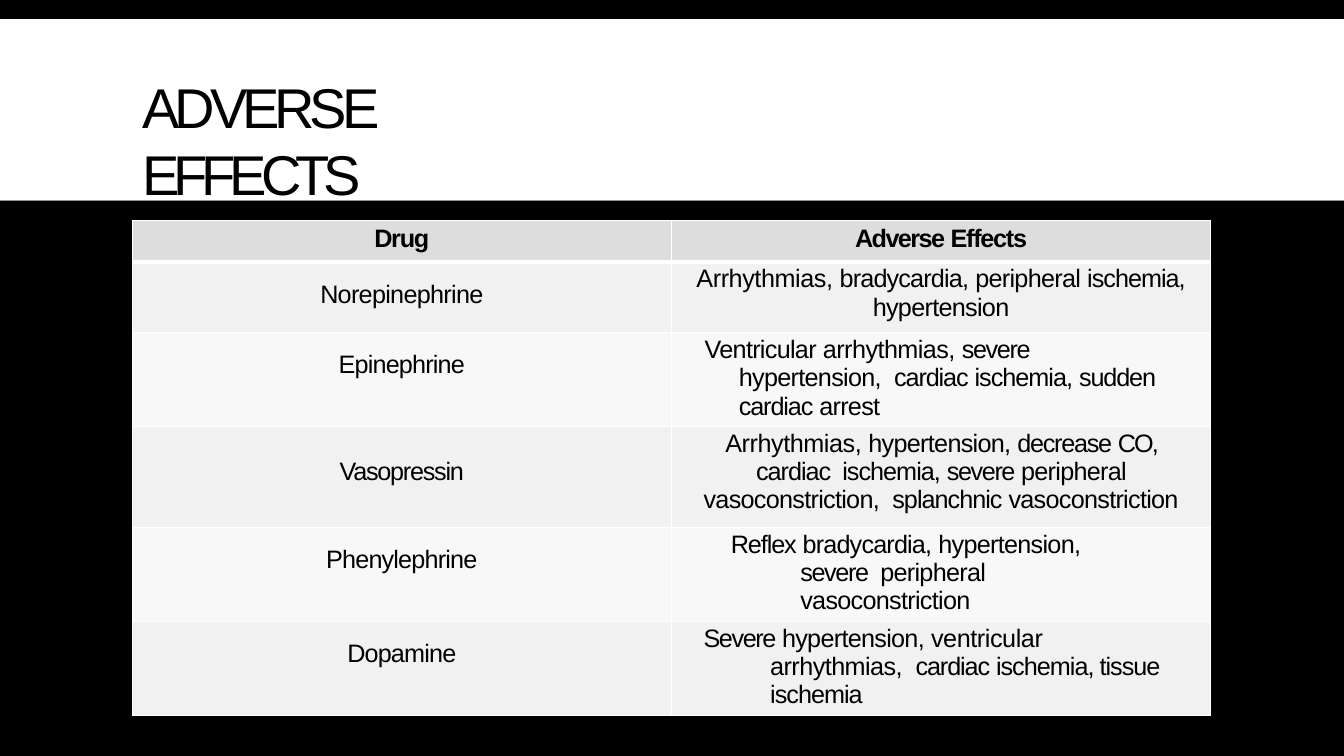
"""Build the adverse effects slide with its drug table."""
from dataclasses import dataclass

from lxml.etree import SubElement
from pptx import Presentation
from pptx.dml.color import RGBColor
from pptx.enum.shapes import MSO_SHAPE as Preset
from pptx.enum.text import MSO_ANCHOR as Anchor, MSO_AUTO_SIZE as AutoSize, PP_ALIGN as Align
from pptx.oxml.ns import qn
from pptx.slide import Slide
from pptx.table import _Cell as Cell
from pptx.text.text import _Paragraph as Paragraph
from pptx.util import Cm, Pt


@dataclass(frozen=True)
class Theme:
    font: str = "Arial"
    title_size: float = 40
    table_size: float = 18
    black: str = "000000"
    white: str = "FFFFFF"
    header: str = "DDDDDD"
    odd_row: str = "F1F1F1"
    even_row: str = "F8F8F8"
    thin: float = 1
    thick: float = 3


@dataclass(frozen=True)
class Band:
    top: float
    height: float
    color: str


@dataclass(frozen=True)
class Piece:
    text: str
    spacing: float


@dataclass(frozen=True)
class Entry:
    paragraphs: list[list[Piece]]
    inset: float
    left: float = 0
    hanging: float = 0
    right: float = 0


@dataclass(frozen=True)
class Row:
    height: float
    drug: Entry
    effects: Entry


THEME = Theme()
WIDTH, HEIGHT = 33.87, 19.05
COLUMN_WIDTH = 13.59
BANDS = [
    Band(0, 0.48, THEME.black),
    Band(5.05, 14, THEME.black),
    Band(0.48, 4.57, THEME.white),
]
TITLE = [Piece("ADVERSE ", -3.6), Piece("EFFECTS", -4.3)]


def drug(name: str, spacing: float, inset: float = 0.46) -> Entry:
    """Return a one-run entry for the drug column."""
    return Entry([[Piece(name, spacing)]], inset)


ROWS = [
    Row(1.04, drug("Drug", -0.9, 0.1),
        Entry([[Piece("Adverse ", -1.1), Piece("Effects", -0.9)]], 0.1)),
    Row(1.78, drug("Norepinephrine", -0.5), Entry([
        [Piece("Arrhythmias, ", -0.3), Piece("bradycardia, ", -0.6),
         Piece("peripheral ", -0.5), Piece("ischemia,", -0.7)],
        [Piece("hypertension", -0.5)]], 0.08)),
    Row(1.78, drug("Epinephrine", -0.6), Entry([
        [Piece("Ventricular ", -0.5), Piece("arrhythmias, ", -0.4), Piece("severe ", -1),
         Piece("hypertension,  ", -0.5), Piece("cardiac ", -0.8), Piece("ischemia, ", -0.7),
         Piece("sudden cardiac ", -0.8), Piece("arrest", -0.5)]], 0.08, 1.7, -0.86, 1.07)),
    Row(2.54, drug("Vasopressin", -0.9, 0.78), Entry([
        [Piece("Arrhythmias, ", -0.3), Piece("hypertension, ", -0.5), Piece("decrease ", -0.9),
         Piece("CO, ", -1.4), Piece("cardiac  ischemia, ", -0.7), Piece("severe ", -1),
         Piece("peripheral vasoconstriction,  ", -0.5), Piece("splanchnic ", -0.7),
         Piece("vasoconstriction", -0.5)]], 0.08, 0.41, 0, 0.41)),
    Row(1.78, drug("Phenylephrine", -0.6), Entry([
        [Piece("Reflex ", -0.8), Piece("bradycardia, ", -0.6), Piece("hypertension, ", -0.5),
         Piece("severe  ", -1), Piece("peripheral vasoconstriction", -0.5)]],
        0.08, 3.25, -1.75, 2.29)),
    Row(1.78, drug("Dopamine", -0.6), Entry([
        [Piece("Severe ", -1), Piece("hypertension, ", -0.5), Piece("ventricular ", -0.3),
         Piece("arrhythmias,  ", -0.4), Piece("cardiac ", -0.8),
         Piece("ischemia, tissue ischemia", -0.7)]], 0.08, 2.49, -1.68, 0.97)),
]


def write_runs(paragraph: Paragraph, pieces: list[Piece], size: float, bold: bool) -> None:
    """Add each piece as a run with its own letter spacing."""
    for piece in pieces:
        run = paragraph.add_run()
        run.text = piece.text
        run.font.name = THEME.font
        run.font.size = Pt(size)
        run.font.bold = bold
        run.font.color.rgb = RGBColor.from_string(THEME.black)
        run._r.get_or_add_rPr().set("spc", str(round(piece.spacing * 100)))


def add_band(slide: Slide, band: Band) -> None:
    """Draw one full-width band."""
    shape = slide.shapes.add_shape(Preset.RECTANGLE, 0, Cm(band.top), Cm(WIDTH), Cm(band.height))
    shape.shadow.inherit = False
    shape.fill.solid()
    shape.fill.fore_color.rgb = RGBColor.from_string(band.color)
    shape.line.fill.background()


def format_title(slide: Slide) -> None:
    """Place the title above the bands and write its runs."""
    title = slide.shapes.title
    title.element.getparent().append(title.element)
    title.left, title.top, title.width, title.height = Cm(3.56), Cm(1.8), Cm(11.56), Cm(1.75)
    frame = title.text_frame
    frame.margin_left = frame.margin_top = Cm(0.03)
    frame.margin_right, frame.margin_bottom = Cm(0.25), 0
    frame.vertical_anchor = Anchor.TOP
    frame.word_wrap = True
    frame.auto_size = AutoSize.SHAPE_TO_FIT_TEXT
    paragraph = frame.paragraphs[0]
    paragraph.alignment = Align.LEFT
    write_runs(paragraph, TITLE, THEME.title_size, False)


def set_borders(cell: Cell, top: float, bottom: float) -> None:
    """Give a cell white borders of the given top and bottom widths."""
    properties = cell._tc.get_or_add_tcPr()
    widths = {"a:lnL": THEME.thin, "a:lnR": THEME.thin, "a:lnT": top, "a:lnB": bottom}
    for tag, width in widths.items():
        line = SubElement(properties, qn(tag), w=str(Pt(width)))
        SubElement(SubElement(line, qn("a:solidFill")), qn("a:srgbClr"), val=THEME.white)


def fill_cell(cell: Cell, entry: Entry, color: str, bold: bool) -> None:
    """Fill a cell and write its paragraphs."""
    cell.fill.solid()
    cell.fill.fore_color.rgb = RGBColor.from_string(color)
    cell.margin_left = cell.margin_right = cell.margin_bottom = 0
    cell.margin_top = Cm(entry.inset)
    cell.vertical_anchor = Anchor.TOP
    frame = cell.text_frame
    for index, pieces in enumerate(entry.paragraphs):
        paragraph = frame.add_paragraph() if index else frame.paragraphs[0]
        paragraph.alignment = Align.LEFT if entry.hanging else Align.CENTER
        properties = paragraph._p.get_or_add_pPr()
        properties.set("marL", str(Cm(entry.left)))
        properties.set("marR", str(Cm(entry.right)))
        properties.set("indent", str(Cm(entry.hanging)))
        write_runs(paragraph, pieces, THEME.table_size, bold)


def add_drug_table(slide: Slide) -> None:
    """Add the table of drugs and their adverse effects."""
    total = sum(row.height for row in ROWS)
    table = slide.shapes.add_table(
        len(ROWS), 2, Cm(3.33), Cm(5.56), Cm(2 * COLUMN_WIDTH), Cm(total)).table
    table.horz_banding = False
    for index, row in enumerate(ROWS):
        table.rows[index].height = Cm(row.height)
        color = THEME.odd_row if index % 2 else THEME.even_row
        top = THEME.thick if index == 1 else THEME.thin
        bottom = THEME.thin if index else THEME.thick
        for column, entry in enumerate((row.drug, row.effects)):
            cell = table.cell(index, column)
            set_borders(cell, top, bottom)
            fill_cell(cell, entry, color if index else THEME.header, index == 0)


def main() -> None:
    """Build and save the presentation."""
    presentation = Presentation()
    presentation.slide_width, presentation.slide_height = Cm(WIDTH), Cm(HEIGHT)
    slide = presentation.slides.add_slide(presentation.slide_layouts[5])
    for band in BANDS:
        add_band(slide, band)
    format_title(slide)
    add_drug_table(slide)
    presentation.save("out.pptx")


if __name__ == "__main__":
    main()
